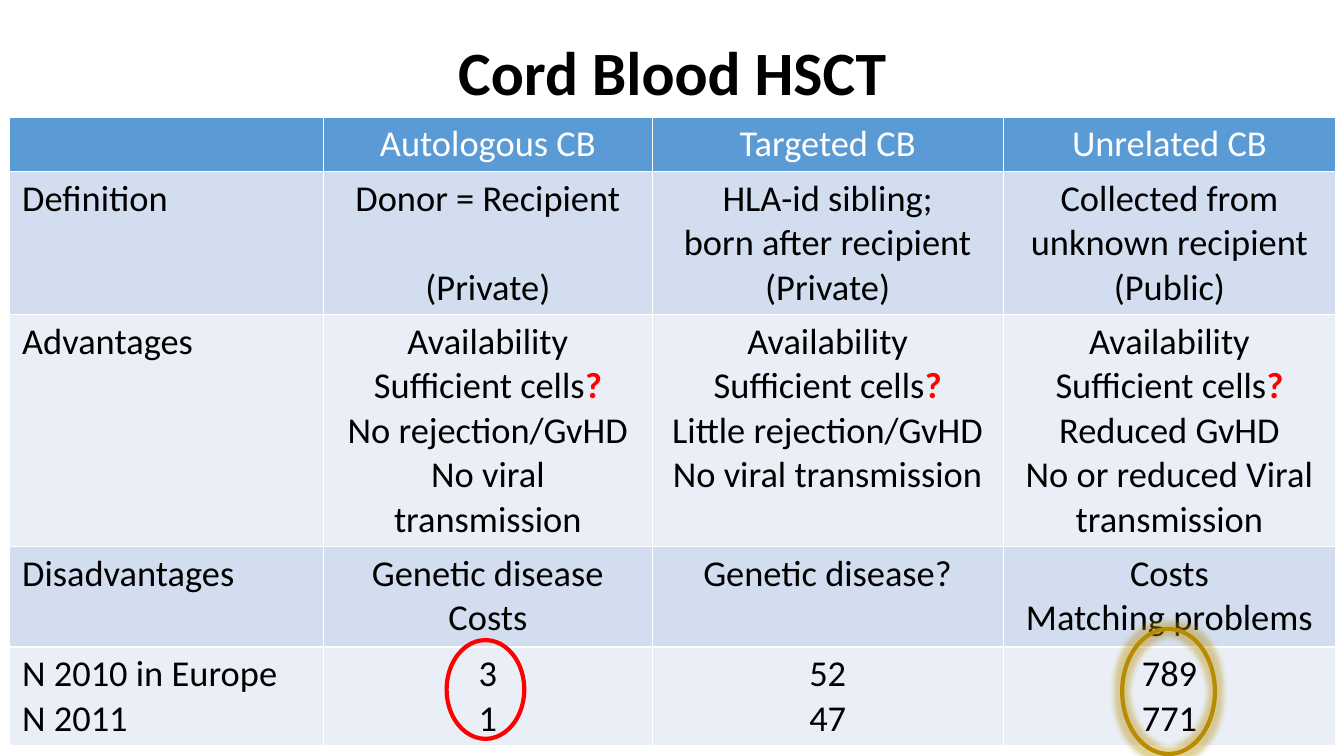
from lxml import etree
from pptx import Presentation
from pptx import util as u
from pptx.dml.color import RGBColor
from pptx.enum import shapes, text
from pptx.oxml.ns import qn

HUES = {"ink": "000000", "paper": "FFFFFF", "head": "5B9BD5", "odd": "D2DEEF",
        "even": "EAEFF7", "red": "FF0000", "gold": "B88C00"}
WIDTHS = [3.12, 3.26, 3.48, 3.3]
HEIGHTS = [0.54, 1.42, 2.3, 1, 0.98]
# "|" starts the part in bold red; an empty line becomes space before the next.
ROWS = [
    ["", "Autologous CB", "Targeted CB", "Unrelated CB"],
    ["Definition",
     "Donor = Recipient\n\n(Private)",
     "HLA-id sibling;\nborn after recipient\n(Private)",
     "Collected from unknown recipient\n(Public)"],
    ["Advantages",
     "Availability\nSufficient cells|?\nNo rejection/GvHD\nNo viral transmission",
     "Availability\nSufficient cells|?\nLittle rejection/GvHD\nNo viral transmission",
     "Availability\nSufficient cells|?\nReduced GvHD\nNo or reduced Viral transmission"],
    ["Disadvantages", "Genetic disease\nCosts", "Genetic disease?",
     "Costs\nMatching problems"],
    ["N 2010 in Europe\nN 2011", "3\n1", "52\n47", "789\n771"],
]


class Deck:
    """Holds the style and the current slide."""
    face = "Calibri"
    size = 26
    line = 31.75

    def __init__(self):
        self.prs = Presentation()
        self.prs.slide_width = u.Inches(13.33)
        self.prs.slide_height = u.Inches(7.5)
        self.slide = self.prs.slides.add_slide(self.prs.slide_layouts[6])

    def hue(self, name):
        return RGBColor.from_string(HUES[name])

    def style(self, font, size, hue, bold=False):
        font.name, font.size, font.bold = self.face, u.Pt(size), bold
        font.color.rgb = self.hue(hue)

    def title(self, words, *box):
        frame = self.slide.shapes.add_textbox(*map(u.Inches, box)).text_frame
        frame.word_wrap = True
        frame.vertical_anchor = text.MSO_ANCHOR.MIDDLE
        para = frame.paragraphs[0]
        para.text = words
        para.alignment = text.PP_ALIGN.CENTER
        para.line_spacing = 0.9
        self.style(para.font, 44, "ink", True)

    def cell(self, cell, words, fill, ink, align):
        cell.fill.solid()
        cell.fill.fore_color.rgb = self.hue(fill)
        cell.margin_left = cell.margin_right = u.Inches(0.13)
        cell.margin_top = cell.margin_bottom = u.Inches(0.05)
        para, gap = cell.text_frame.paragraphs[0], 0
        for i, line in enumerate(words.split("\n")):
            if i and not line:
                gap += self.line
                continue
            if i:
                para = cell.text_frame.add_paragraph()
            if gap:
                para.space_before, gap = u.Pt(gap), 0
            para.alignment = align
            self.style(para.font, self.size, ink)
            plain, _, mark = line.partition("|")
            if plain:
                para.add_run().text = plain
            if mark:
                run = para.add_run()
                run.text = mark
                self.style(run.font, self.size, "red", True)

    def table(self, rows, widths, heights, left, top):
        grid = self.slide.shapes.add_table(
            len(rows), len(widths), u.Inches(left), u.Inches(top),
            u.Inches(sum(widths)), u.Inches(sum(heights))).table
        for col, width in zip(grid.columns, widths):
            col.width = u.Inches(width)
        for r, row in enumerate(rows):
            grid.rows[r].height = u.Inches(heights[r])
            fill = "head" if r == 0 else "odd" if r % 2 else "even"
            for c, words in enumerate(row):
                align = text.PP_ALIGN.CENTER if c else text.PP_ALIGN.LEFT
                self.cell(grid.cell(r, c), words, fill,
                          "ink" if r else "paper", align)

    def ring(self, hue, *box, glow=0):
        """Draw an open ellipse, with a glow of the given radius in points."""
        ring = self.slide.shapes.add_shape(
            shapes.MSO_SHAPE.OVAL, *map(u.Inches, box))
        ring.shadow.inherit = False
        ring.fill.background()
        ring.line.color.rgb = self.hue(hue)
        ring.line.width = u.Pt(3)
        if glow:
            effects = ring._element.spPr.find(qn("a:effectLst"))
            halo = etree.SubElement(effects, qn("a:glow"), rad=str(u.Pt(glow)))
            tint = etree.SubElement(halo, qn("a:srgbClr"), val=HUES[hue])
            etree.SubElement(tint, qn("a:alpha"), val="40000")


def main():
    deck = Deck()
    deck.title("Cord Blood HSCT", 0.92, 0.02, 11.5, 1.45)
    deck.table(ROWS, WIDTHS, HEIGHTS, 0.09, 1.16)
    deck.ring("red", 4.43, 6.35, 0.77, 0.98)
    deck.ring("gold", 11.13, 6.24, 0.92, 1.24, glow=8)
    deck.prs.save("out.pptx")


if __name__ == "__main__":
    main()
